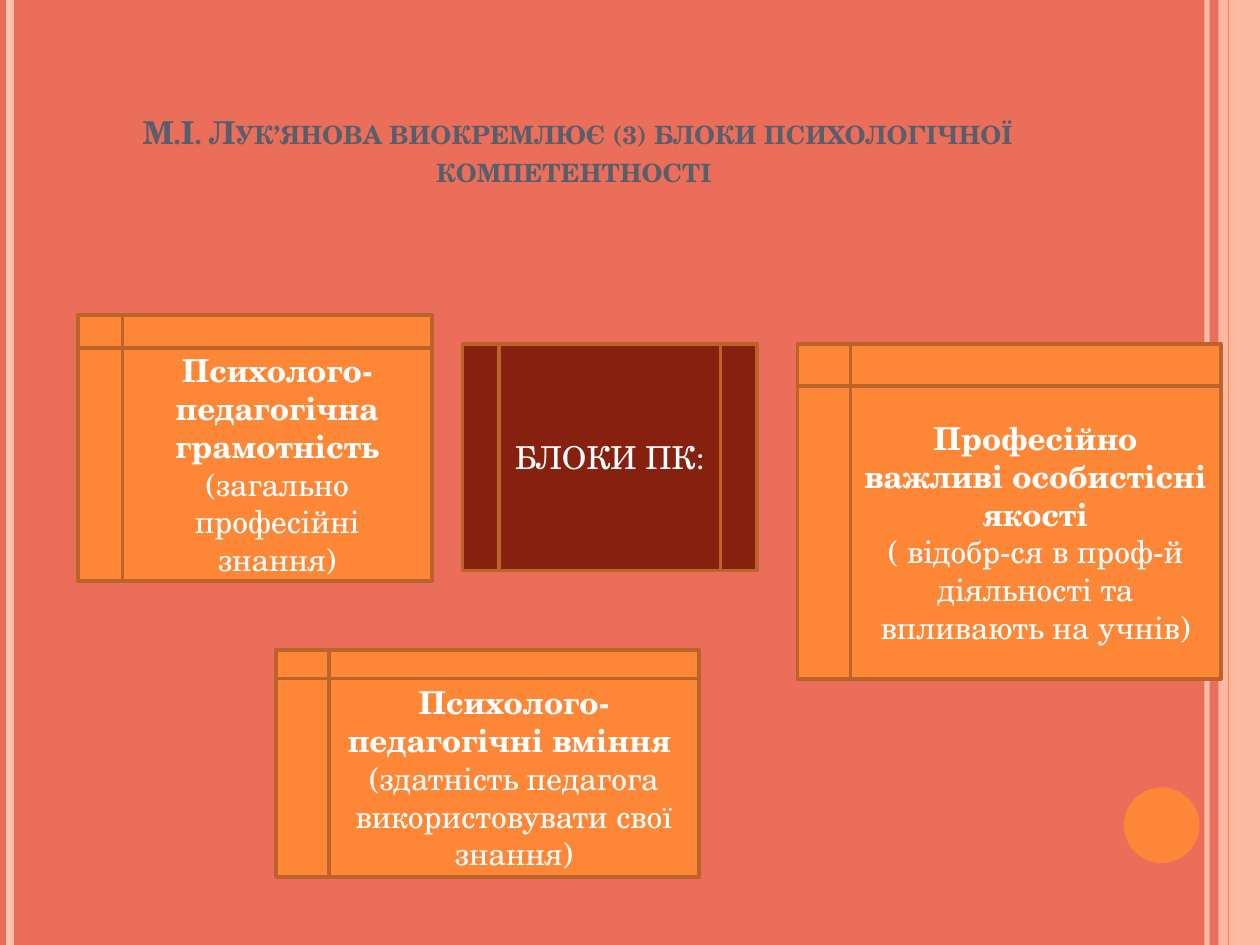
"""Build a slide on the three blocks of psychological competence."""
from typing import NamedTuple

from lxml.etree import SubElement
from pptx import Presentation
from pptx.dml.color import RGBColor
from pptx.enum.shapes import MSO_CONNECTOR as Conn, MSO_SHAPE as Shape
from pptx.enum.text import MSO_ANCHOR as Anchor, PP_ALIGN as Align
from pptx.oxml.ns import qn
from pptx.util import Inches, Pt

COLS, ROWS = 100, 75
WIDTH, HEIGHT = Inches(10), Inches(7.5)
COLORS = {
    "back": "EB6E5A", "pale": "FEC3AE", "orange": "FE8637", "edge": "BC6329",
    "dark": "862110", "title": "575F6D", "white": "FFFFFF",
}
FONT = {"name": "TeX Gyre Schola", "size": Pt(18)}


class Box(NamedTuple):
    col: float
    row: float
    cols: float
    rows: float


class Rule(NamedTuple):
    col: float
    color: str
    width: float
    opacity: int = 100


class Block(NamedTuple):
    box: Box
    heading: str
    detail: str = ""
    kind: Shape = Shape.FLOWCHART_INTERNAL_STORAGE
    fill: str = "orange"


TITLE = "М.І. Лук’янова виокремлює (3) блоки психологічної компетентності "
BACK_RULES = [Rule(95.8, "pale", 3, 93), Rule(0.8, "pale", 4.5),
              Rule(98.3, "orange", 1.5)]
FRONT_RULE = Rule(97.5, "orange", 0.75)
BLOCKS = [
    Block(Box(36.7, 27.3, 23.4, 18), "", "БЛОКИ ПК:",
          Shape.FLOWCHART_PREDEFINED_PROCESS, "dark"),
    Block(Box(6.2, 25, 28.1, 21.1), "Психолого-педагогічна грамотність",
          "(загально професійні знання)"),
    Block(Box(21.9, 51.6, 33.6, 18), "Психолого-педагогічні вміння ",
          "(здатність педагога використовувати свої знання)"),
    Block(Box(63.3, 27.3, 33.6, 26.6), "Професійно важливі особистісні якості",
          "( відобр-ся в проф-й діяльності та впливають на учнів)"),
]


def place(box: Box) -> tuple:
    x, y = WIDTH / COLS, HEIGHT / ROWS
    return tuple(round(v * u) for v, u in zip(box, (x, y, x, y)))


def assign(target, values: dict) -> None:
    for name, value in values.items():
        setattr(target, name, value)


def paint(fill, color: str, opacity: int = 100) -> None:
    fill.solid()
    fill.fore_color.rgb = RGBColor.from_string(COLORS[color])
    if opacity < 100:
        clr = fill._xPr.find(qn("a:solidFill"))[0]
        SubElement(clr, qn("a:alpha")).set("val", str(opacity * 1000))


def add_rule(s, rule: Rule) -> None:
    x, _, _, bottom = place(Box(rule.col, 0, 0, ROWS))
    line = s.shapes.add_connector(Conn.STRAIGHT, x, 0, x, bottom)
    paint(line.line.fill, rule.color, rule.opacity)
    line.line.width = Pt(rule.width)
    SubElement(line._element.spPr, qn("a:effectLst"))


def add_shape(s, kind: Shape, box: Box, fill: str, opacity: int = 100):
    sp = s.shapes.add_shape(kind, *place(box))
    sp.shadow.inherit = False
    paint(sp.fill, fill, opacity)
    sp.line.fill.background()
    return sp


def add_text(p, text: str, color: str, bold: bool):
    p.alignment = Align.CENTER
    r = p.add_run()
    r.text = text
    assign(r.font, FONT | {"bold": bold})
    paint(r.font.fill, color)
    return r


def add_block(s, block: Block) -> None:
    sp = add_shape(s, block.kind, block.box, block.fill)
    paint(sp.line.fill, "edge")
    sp.line.width = Pt(2)
    tf = sp.text_frame
    assign(tf, {"word_wrap": True, "vertical_anchor": Anchor.MIDDLE})
    p = tf.paragraphs[0]
    if block.heading:
        add_text(p, block.heading, "white", True)
        p = tf.add_paragraph()
    add_text(p, block.detail, "white", False)


def add_title(s) -> None:
    tf = s.shapes.add_textbox(*place(Box(5, 3, 81.7, 12.5))).text_frame
    assign(tf, {"word_wrap": True, "vertical_anchor": Anchor.BOTTOM})
    r = add_text(tf.paragraphs[0], TITLE, "title", True)
    r.font._element.set("cap", "small")


def main() -> None:
    prs = Presentation()
    assign(prs, {"slide_width": WIDTH, "slide_height": HEIGHT})
    s = prs.slides.add_slide(prs.slide_layouts[6])
    paint(s.background.fill, "back")
    for rule in BACK_RULES:
        add_rule(s, rule)
    add_shape(s, Shape.RECTANGLE, Box(96.7, 0, 3.3, ROWS), "pale", 87)
    add_rule(s, FRONT_RULE)
    add_shape(s, Shape.OVAL, Box(89.2, 62.5, 6, 6), "orange")
    add_title(s)
    for block in BLOCKS:
        add_block(s, block)
    prs.save("out.pptx")


if __name__ == "__main__":
    main()
